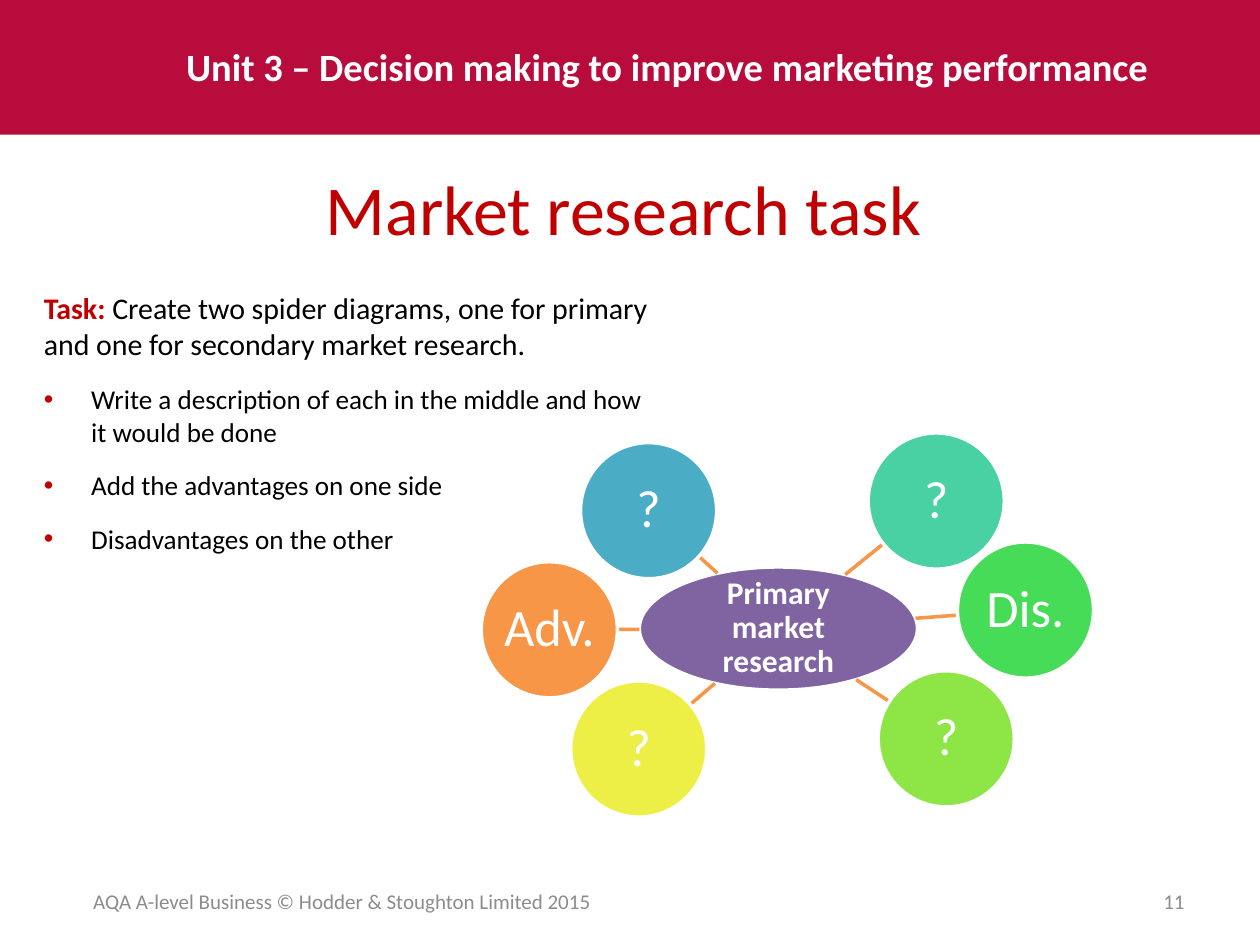
from math import hypot

from lxml.etree import SubElement
from pptx import Presentation
from pptx.dml.color import RGBColor
from pptx.enum.shapes import MSO_CONNECTOR, MSO_SHAPE
from pptx.enum.text import MSO_ANCHOR, PP_ALIGN
from pptx.oxml.ns import qn
from pptx.util import Pt

WHITE, BLACK, RED, CRIMSON = "FFFFFF", "000000", "C00000", "B70C3C"
ORANGE, PURPLE, GREY = "F79646", "8064A2", "8C8C8C"


def rgb(value):
    return RGBColor.from_string(value)


class SlideBuilder:
    font = "Calibri"
    line_width = 2

    def __init__(self, slide):
        self.s = slide

    def runs(self, p, runs):
        """Add (text, size, colour, bold) runs to a paragraph."""
        for text, size, color, bold in runs:
            r = p.add_run()
            r.text = text
            style = {"name": self.font, "size": Pt(size), "bold": bold}
            for key, value in style.items():
                setattr(r.font, key, value)
            r.font.color.rgb = rgb(color)

    def text(self, box, runs, align=PP_ALIGN.LEFT, anchor=MSO_ANCHOR.TOP):
        """Add a text box with one paragraph and return its text frame."""
        tf = self.s.shapes.add_textbox(*map(Pt, box)).text_frame
        tf.word_wrap = True
        tf.vertical_anchor = anchor
        tf.paragraphs[0].alignment = align
        self.runs(tf.paragraphs[0], runs)
        return tf

    def bullet(self, tf, text, size, indent):
        p = tf.add_paragraph()
        pPr = p._p.get_or_add_pPr()
        pPr.set("marL", str(Pt(indent)))
        pPr.set("indent", str(-Pt(indent)))
        color = SubElement(pPr, qn("a:buClr"))
        SubElement(color, qn("a:srgbClr")).set("val", RED)
        SubElement(pPr, qn("a:buFont")).set("typeface", "Arial")
        SubElement(pPr, qn("a:buChar")).set("char", "•")
        self.runs(p, [(text, size, BLACK, False)])

    def shape(self, kind, box, fill, line=None):
        sp = self.s.shapes.add_shape(kind, *map(Pt, box))
        sp.shadow.inherit = False
        sp.fill.solid()
        sp.fill.fore_color.rgb = rgb(fill)
        if line:
            sp.line.color.rgb = rgb(line)
            sp.line.width = Pt(self.line_width)
        else:
            sp.line.fill.background()
        return sp

    def bubble(self, center, size, fill, text, font_size, bold=False):
        (x, y), (w, h) = center, size
        sp = self.shape(MSO_SHAPE.OVAL, (x - w / 2, y - h / 2, w, h), fill, WHITE)
        tf = sp.text_frame
        frame = dict.fromkeys(
            ("margin_left", "margin_top", "margin_right", "margin_bottom"), Pt(1))
        frame.update(word_wrap=True, vertical_anchor=MSO_ANCHOR.MIDDLE)
        for key, value in frame.items():
            setattr(tf, key, value)
        p = tf.paragraphs[0]
        p.alignment = PP_ALIGN.CENTER
        p.line_spacing = 0.9
        self.runs(p, [(text, font_size, WHITE, bold)])

    def spoke(self, hub, hub_size, center, diameter):
        """Draw the centre line between two bubbles, from rim to rim."""
        dx, dy = center[0] - hub[0], center[1] - hub[1]
        start = 1 / hypot(2 * dx / hub_size[0], 2 * dy / hub_size[1])
        end = 1 - diameter / 2 / hypot(dx, dy)
        ends = [Pt(v) for t in (start, end)
                for v in (hub[0] + t * dx, hub[1] + t * dy)]
        c = self.s.shapes.add_connector(MSO_CONNECTOR.STRAIGHT, *ends)
        c.line.color.rgb = rgb(ORANGE)
        c.line.width = Pt(self.line_width)
        SubElement(c._element.spPr, qn("a:effectLst"))


def main():
    prs = Presentation()
    prs.slide_width, prs.slide_height = Pt(720), Pt(540)
    s = SlideBuilder(prs.slides.add_slide(prs.slide_layouts[6]))

    s.shape(MSO_SHAPE.RECTANGLE, (0, 0, 720, 77), CRIMSON)
    s.text((99.3, 20.9, 578, 34),
           [("Unit 3 – Decision making to improve marketing performance",
             22, WHITE, True)])
    s.text((14.4, 88.5, 684, 60), [("Market research task", 40, RED, False)],
           PP_ALIGN.CENTER, MSO_ANCHOR.MIDDLE)

    task = s.text((18, 162, 364.5, 158), [
        ("Task: ", 17.1, RED, True),
        ("Create two spider diagrams, one for primary and one for "
         "secondary market research.", 17.1, BLACK, False)])
    for item in ("Write a description of each in the middle and how it would be done",
                 "Add the advantages on one side",
                 "Disadvantages on the other"):
        s.bullet(task, item, 15.5, 27)
    for p in task.paragraphs:
        p.space_after = Pt(12)

    hub, hub_size, diameter = (444.8, 359.2), (159, 70.4), 77.8
    s.bubble(hub, hub_size, PURPLE, "Primary market research", 18, True)
    for center, fill, text in (
            ((370.6, 291.8), "4BACC6", "?"),
            ((535, 286.3), "49D1A3", "?"),
            ((586, 348.6), "47DC57", "Dis."),
            ((540.7, 422.2), "8DE646", "?"),
            ((365, 428), "EEEF46", "?"),
            ((313.9, 359.9), ORANGE, "Adv.")):
        s.spoke(hub, hub_size, center, diameter)
        s.bubble(center, (diameter, diameter), fill, text, 30)

    for x, width, text, align in (
            (36.7, 317.5, "AQA A-level Business © Hodder & Stoughton Limited 2015",
             PP_ALIGN.CENTER),
            (516, 168, "11", PP_ALIGN.RIGHT)):
        s.text((x, 500.5, width, 28.8), [(text, 12, GREY, False)],
               align, MSO_ANCHOR.MIDDLE)

    prs.save("out.pptx")


if __name__ == "__main__":
    main()
